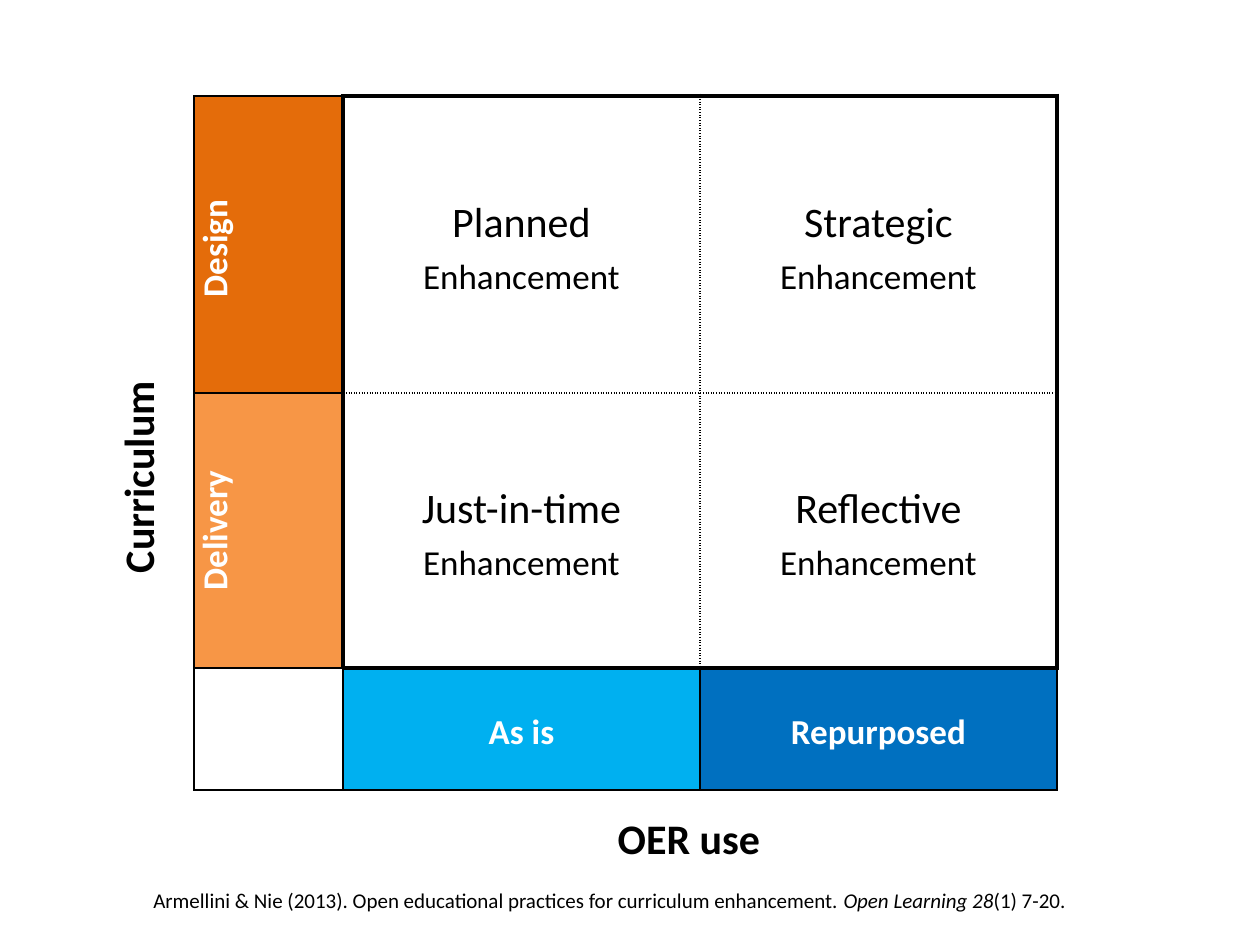
import pptx
import pptx.util
import pptx.dml.color
import pptx.enum.shapes
import pptx.enum.text
import pptx.oxml
import pptx.oxml.ns

PX = 914400 / 126  # EMU in one px
FONT = "Calibri"
COLORS = {
    "black": "000000", "white": "FFFFFF",
    "design": "E46C0A", "delivery": "F79646",
    "as_is": "00B0F0", "repurposed": "0070C0",
}
THIN, FRAME, DOTTED = (1, "solid"), (3, "solid"), (1, "sysDot")


def px(length):
    return pptx.util.Emu(round(length * PX))


def rgb(name):
    return pptx.dml.color.RGBColor.from_string(COLORS[name])


class SlideBuilder:
    def __init__(self, slide):
        self.slide = slide

    def add_runs(self, frame, paragraphs, color="black", bold=False,
                 centered=True, spacing=None):
        """Each paragraph is a list of (text, size, italic) runs."""
        frame.word_wrap = True
        for i, runs in enumerate(paragraphs):
            paragraph = frame.add_paragraph() if i else frame.paragraphs[0]
            align = pptx.enum.text.PP_ALIGN
            paragraph.alignment = align.CENTER if centered else align.LEFT
            if spacing:
                paragraph.line_spacing = spacing
            for text, size, italic in runs:
                run = paragraph.add_run()
                run.text = text
                run.font.name = FONT
                run.font.size = pptx.util.Pt(size)
                run.font.bold = bold
                run.font.italic = italic
                run.font.color.rgb = rgb(color)

    def text(self, box, paragraphs, upward=False, **style):
        label = self.slide.shapes.add_textbox(*map(px, box))
        self.add_runs(label.text_frame, paragraphs, **style)
        if upward:
            label.text_frame._txBody.bodyPr.set("vert", "vert270")

    def rectangle(self, box, fill, paragraphs, **style):
        shape = self.slide.shapes.add_shape(
            pptx.enum.shapes.MSO_SHAPE.RECTANGLE, *map(px, box))
        shape.shadow.inherit = False
        shape.fill.solid()
        shape.fill.fore_color.rgb = rgb(fill)
        shape.line.fill.background()
        shape.text_frame.vertical_anchor = pptx.enum.text.MSO_ANCHOR.TOP
        self.add_runs(shape.text_frame, paragraphs, **style)

    def table(self, left, top, widths, heights):
        table = self.slide.shapes.add_table(
            len(heights), len(widths), px(left), px(top),
            px(sum(widths)), px(sum(heights))).table
        table.first_row = table.horz_banding = False
        for column, width in zip(table.columns, widths):
            column.width = px(width)
        for row, height in zip(table.rows, heights):
            row.height = px(height)
        return table

    def cell(self, cell, paragraphs, fill, borders, upward=False, **style):
        cell.margin_left = cell.margin_right = px(9)
        cell.margin_top = cell.margin_bottom = 0
        cell.vertical_anchor = pptx.enum.text.MSO_ANCHOR.MIDDLE
        if fill:
            cell.fill.solid()
            cell.fill.fore_color.rgb = rgb(fill)
        else:
            cell.fill.background()
        self.add_runs(cell.text_frame, paragraphs, **style)
        properties = cell._tc.get_or_add_tcPr()
        if upward:
            properties.set("vert", "vert270")
        for i, (side, (width, dash)) in enumerate(zip("LRTB", borders)):
            properties.insert(i, pptx.oxml.parse_xml(
                f'<a:ln{side} {pptx.oxml.ns.nsdecls("a")} '
                f'w="{pptx.util.Pt(width)}"><a:solidFill>'
                f'<a:srgbClr val="{COLORS["black"]}"/></a:solidFill>'
                f'<a:prstDash val="{dash}"/></a:ln{side}>'))


def rule(line, in_matrix, frame_lines):
    """Heavy frame around the four quadrants, dots between them."""
    if not in_matrix:
        return THIN
    return FRAME if line in frame_lines else DOTTED


def cell_borders(row, col):
    vertical = [rule(line, row < 2 and line > 0, (1, 3))
                for line in (col, col + 1)]
    horizontal = [rule(line, col > 0 and line < 3, (0, 2))
                  for line in (row, row + 1)]
    return vertical + horizontal


def quadrant(kind):
    return [[(kind, 24, False)], [("Enhancement", 20, False)]]


def heading(text, size=20):
    return [[(text, size, False)]]


def main():
    deck = pptx.Presentation()
    deck.slide_width, deck.slide_height = px(1260), px(945)
    builder = SlideBuilder(deck.slides.add_slide(deck.slide_layouts[6]))

    # Matrix: curriculum stages down the side, OER use along the bottom
    strategic = [[("Strategic ", 24, False), ("Enhancement", 20, False)]]
    matrix_rows = [
        [(heading("Design "), "design"),
         (quadrant("Planned"), None), (strategic, None)],
        [(heading("Delivery"), "delivery"),
         (quadrant("Just-in-time"), None), (quadrant("Reflective"), None)],
        [([], None),
         (heading("As is"), "as_is"), (heading("Repurposed"), "repurposed")],
    ]
    matrix = builder.table(194, 96, [149, 357, 357], [297, 275, 122])
    for r, entries in enumerate(matrix_rows):
        for c, (paragraphs, fill) in enumerate(entries):
            builder.cell(
                matrix.cell(r, c), paragraphs, fill, cell_borders(r, c),
                upward=c == 0 and r < 2, bold=bool(fill),
                color="white" if fill else "black",
                spacing=1.15 if c else None)

    # Axis titles
    builder.rectangle((583, 806, 212, 59), "white",
                      heading("OER use", 24), bold=True)
    builder.text((106, 343, 69, 268), heading("Curriculum", 24),
                 upward=True, bold=True)

    # Citation
    builder.text((141, 881, 948, 38), [[
        ("Armellini & Nie (2013). Open educational practices for "
         "curriculum enhancement. ", 12, False),
        ("Open Learning 28", 12, True),
        ("(1) 7-20.", 12, False),
    ]], centered=False)

    deck.save("out.pptx")


if __name__ == "__main__":
    main()
